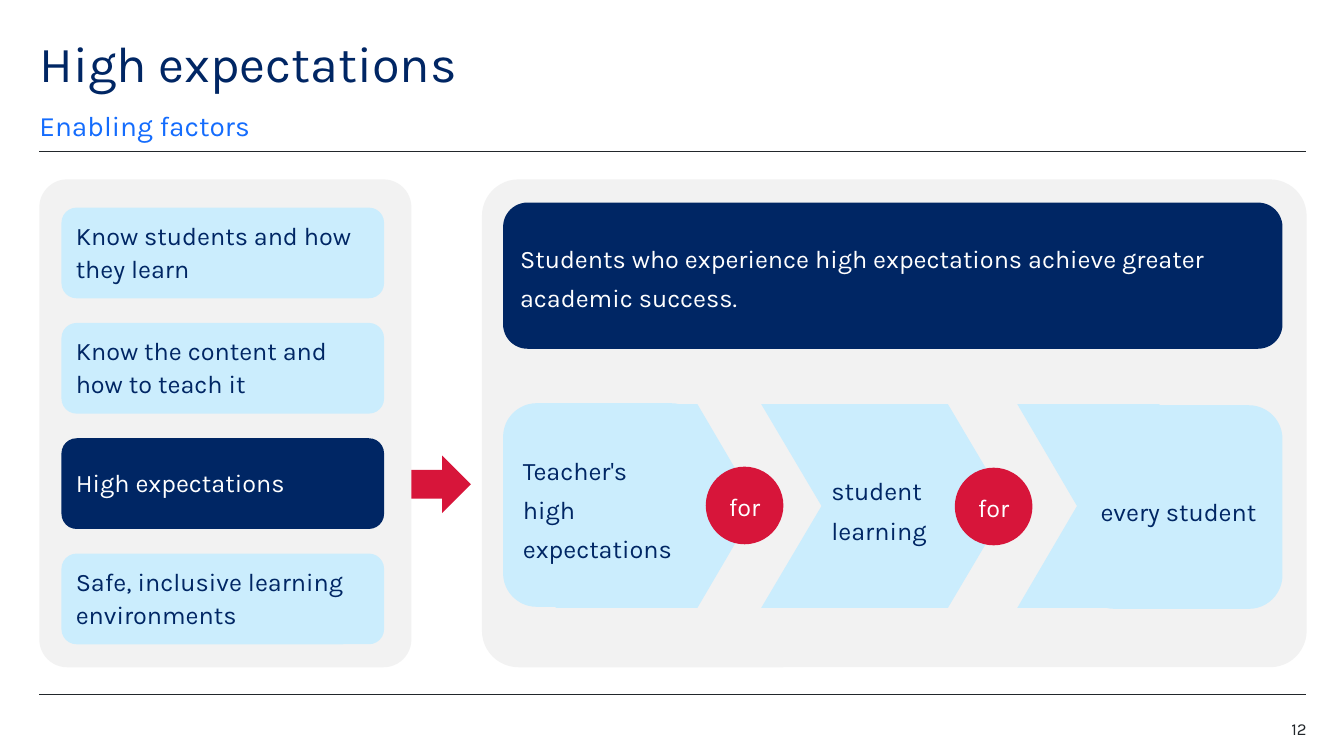
from typing import NamedTuple

from lxml import etree
from pptx import Presentation
from pptx.dml.color import RGBColor
from pptx.enum.shapes import MSO_CONNECTOR, MSO_SHAPE
from pptx.enum.text import MSO_ANCHOR, MSO_AUTO_SIZE, PP_ALIGN
from pptx.oxml.ns import qn
from pptx.util import Inches, Pt

NAVY = RGBColor(0x00, 0x26, 0x64)
BLUE = RGBColor(0x14, 0x6C, 0xFD)
SKY = RGBColor(0xCB, 0xED, 0xFD)
RED = RGBColor(0xD7, 0x15, 0x3A)
GREY = RGBColor(0xF2, 0xF2, 0xF2)
INK = RGBColor(0x22, 0x27, 0x2B)
WHITE = RGBColor(0xFF, 0xFF, 0xFF)

ROUNDED = MSO_SHAPE.ROUNDED_RECTANGLE
CHEVRON = MSO_SHAPE.CHEVRON
CIRCLE = MSO_SHAPE.OVAL
ARROW = MSO_SHAPE.RIGHT_ARROW
STRAIGHT = MSO_CONNECTOR.STRAIGHT
TOP, MIDDLE, BOTTOM = MSO_ANCHOR.TOP, MSO_ANCHOR.MIDDLE, MSO_ANCHOR.BOTTOM
LEFT, CENTER, RIGHT = PP_ALIGN.LEFT, PP_ALIGN.CENTER, PP_ALIGN.RIGHT
NO_AUTOFIT = MSO_AUTO_SIZE.NONE

FONT = "Karla"
MARGIN, RIGHT_EDGE = 0.39, 12.95
TIGHT = (0.1, 0, 0.1, 0.05)
STANDARD = (0.1, 0.05, 0.1, 0.05)
FLUSH = (0, 0, 0, 0)


class Box(NamedTuple):
    left: float
    top: float
    width: float
    height: float


class Block(NamedTuple):
    kind: MSO_SHAPE
    box: Box
    fill: RGBColor
    text: str = ""
    color: RGBColor = NAVY
    spacing: float = 1.3
    insets: tuple[float, ...] = TIGHT
    align: PP_ALIGN = LEFT
    adjust: float | None = None


def place(shape, box: Box) -> None:
    shape.left, shape.top, shape.width, shape.height = map(Inches, box)


def write(shape, text: str, size: float, color: RGBColor, spacing: float = 1.0,
          insets: tuple[float, ...] = FLUSH, anchor: MSO_ANCHOR = TOP,
          align: PP_ALIGN = LEFT) -> None:
    frame = shape.text_frame
    frame.text = text
    frame.word_wrap = True
    frame.auto_size = NO_AUTOFIT
    frame.vertical_anchor = anchor
    (frame.margin_left, frame.margin_top,
     frame.margin_right, frame.margin_bottom) = map(Inches, insets)
    line = frame.paragraphs[0]
    line.alignment = align
    line.line_spacing = spacing
    line.font.name = FONT
    line.font.size = Pt(size)
    line.font.color.rgb = color


def draw_block(slide, block: Block) -> None:
    shape = slide.shapes.add_shape(block.kind, *map(Inches, block.box))
    shape.shadow.inherit = False
    shape.fill.solid()
    shape.fill.fore_color.rgb = block.fill
    shape.line.fill.background()
    if block.adjust is not None:
        shape.adjustments[0] = block.adjust
    if block.text:
        write(shape, block.text, 18, block.color, block.spacing,
              block.insets, MIDDLE, block.align)


def draw_rule(slide, top: float) -> None:
    rule = slide.shapes.add_connector(
        STRAIGHT, Inches(MARGIN), Inches(top), Inches(RIGHT_EDGE), Inches(top))
    rule.line.color.rgb = INK
    rule.line.width = Pt(0.5)
    etree.SubElement(rule.element.spPr, qn("a:effectLst"))


def write_headings(slide) -> None:
    title, subtitle = slide.placeholders
    place(title, Box(MARGIN, 0.39, 11.02, 0.6))
    write(title, "High expectations", 36, NAVY, 0.9)

    place(subtitle, Box(MARGIN, 1.07, 11.02, 0.34))
    subtitle.text_frame.text = "Enabling factors"
    write(subtitle, "Enabling factors", 20, BLUE, 1.5, anchor=BOTTOM)
    line = subtitle.text_frame.paragraphs[0]
    line.space_before = Pt(0)
    line.space_after = Pt(12)
    properties = line._p.get_or_add_pPr()
    properties.set("marL", "0")
    properties.set("indent", "0")
    properties.insert_element_before(
        etree.Element(qn("a:buNone")), "a:tabLst", "a:defRPr", "a:extLst")


def factor_blocks() -> list[Block]:
    factors = [
        "Know students and how they learn",
        "Know the content and how to teach it",
        "High expectations",
        "Safe, inclusive learning environments",
    ]
    blocks = []
    for row, factor in enumerate(factors):
        current = factor == "High expectations"
        blocks.append(Block(
            ROUNDED, Box(0.61, 2.06 + row * 1.144, 3.2, 0.9),
            NAVY if current else SKY, factor,
            WHITE if current else NAVY, spacing=1.1))
    return blocks


def for_circle(left: float, top: float) -> Block:
    return Block(CIRCLE, Box(left, top, 0.77, 0.77), RED, "for", WHITE,
                 spacing=1.2, align=CENTER)


def chevron(left: float, width: float, text: str = "") -> Block:
    return Block(CHEVRON, Box(left, 4.01, width, 2.02), SKY, text,
                 insets=STANDARD, adjust=0.296)


def chain_end(left: float, top: float, text: str) -> Block:
    return Block(ROUNDED, Box(left, top, 2, 2.02), SKY, text, insets=STANDARD)


def main() -> None:
    deck = Presentation()
    deck.slide_width, deck.slide_height = Inches(13.33), Inches(7.5)
    slide = deck.slides.add_slide(deck.slide_layouts[1])

    write_headings(slide)
    for top in (1.5, 6.89):
        draw_rule(slide, top)

    panels = [Block(ROUNDED, Box(left, 1.78, width, 4.84), GREY, adjust=0.075)
              for left, width in ((MARGIN, 3.69), (4.78, 8.18))]
    arrow = Block(ARROW, Box(4.08, 4.52, 0.59, 0.57), RED)
    message = Block(
        ROUNDED, Box(4.99, 2.01, 7.73, 1.45), NAVY,
        "Students who experience high expectations achieve greater academic success.",
        WHITE)
    chain = [
        chevron(5.51, 2),
        chain_end(4.99, 4, "Teacher's high expectations"),
        for_circle(7, 4.63),
        chevron(7.55, 2.45, "student learning"),
        for_circle(9.47, 4.64),
        chevron(10.09, 2),
        chain_end(10.72, 4.02, "every student"),
    ]
    for block in [*panels, *factor_blocks(), arrow, message, *chain]:
        draw_block(slide, block)

    page_number = slide.shapes.add_textbox(
        *map(Inches, Box(12.17, 7.13, 0.79, 0.2)))
    write(page_number, "12", 12, INK, align=RIGHT)

    deck.save("out.pptx")


if __name__ == "__main__":
    main()
